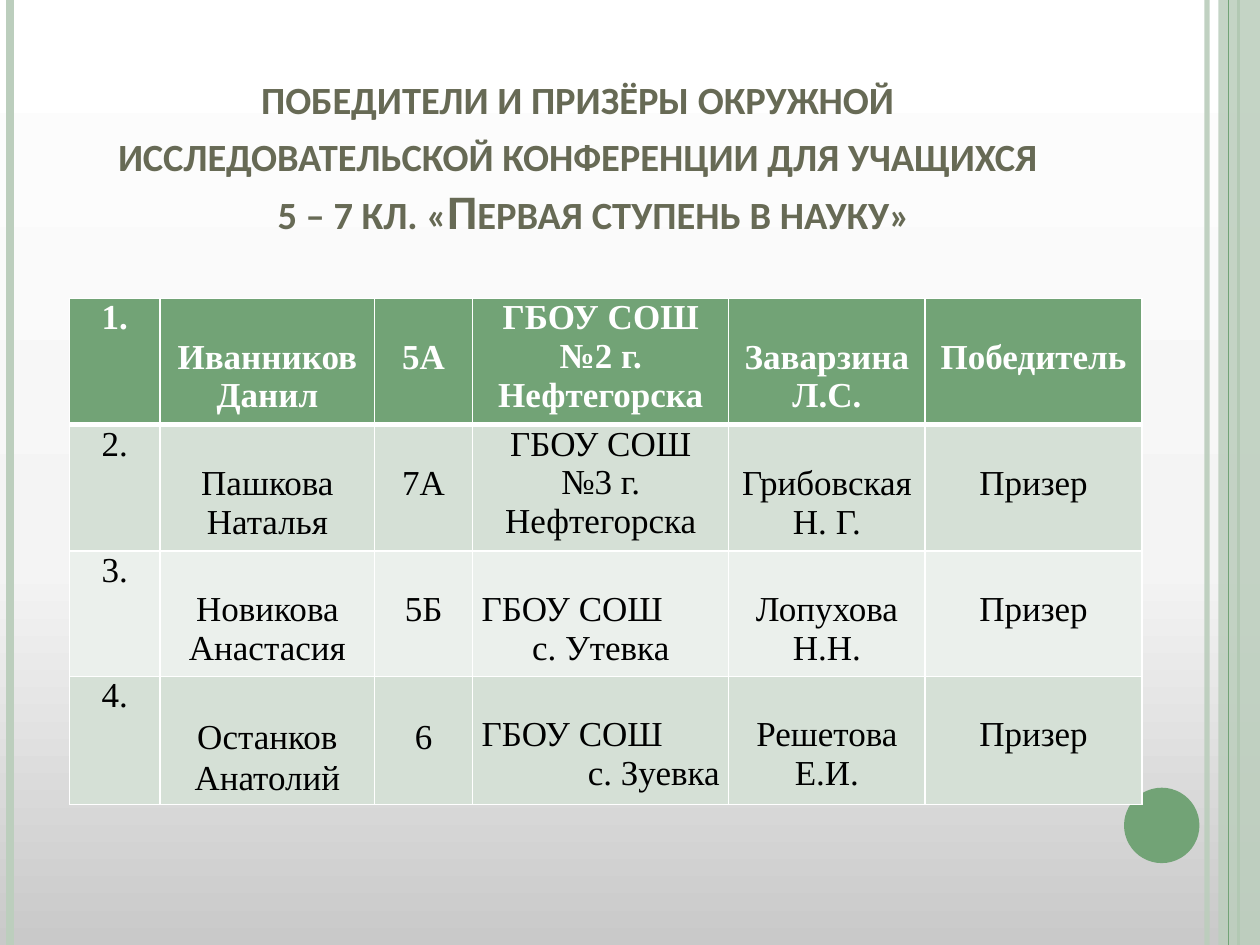
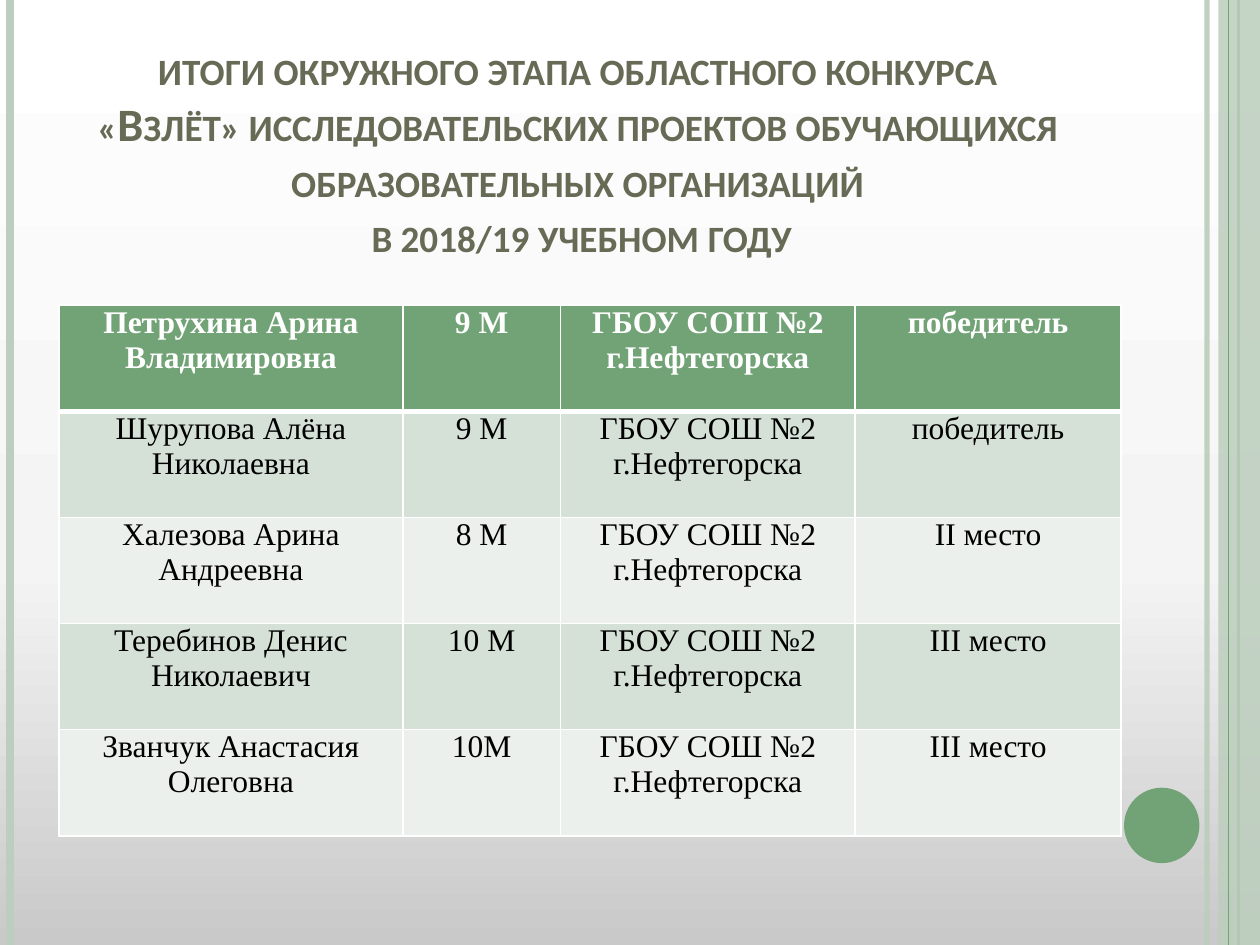
import pptx
import pptx.dml.color
import pptx.enum.shapes
import pptx.enum.text
import pptx.oxml
import pptx.oxml.ns
import pptx.util
from lxml import etree

Cm = pptx.util.Cm
Pt = pptx.util.Pt
qn = pptx.oxml.ns.qn
ALIGN = pptx.enum.text.PP_ALIGN
SHAPE = pptx.enum.shapes.MSO_SHAPE

WIDTH, HEIGHT = 25.4, 19.05
GREEN, PALE_GREEN, WHITE, BLACK = "72A376", "BCCEBD", "FFFFFF", "000000"
TITLE_COLOR = "676A55"
ROW_BANDS = ["D5E0D6", "EBF0EC"]
BACKGROUND_STOPS = [(0, "C9C9C9"), (40, "F4F4F4"), (100, WHITE)]
TITLE_FONT, TABLE_FONT = "Calibri", "Times New Roman"
BLANK_LINE = 0.79

CONFERENCE_TITLE = [
    ("победители и призёры окружной", 0),
    ("исследовательской конференции для учащихся", 0),
    ("5 – 7 кл. «Первая ступень в науку»", 0.65),
]
CONFERENCE_ROWS = [
    ["1.", "Иванников Данил", "5А", "ГБОУ СОШ №2 г. Нефтегорска", "Заварзина Л.С.", "Победитель"],
    ["2.", "Пашкова\nНаталья", "7А", "ГБОУ СОШ №3 г. Нефтегорска", "Грибовская Н. Г.", "Призер"],
    ["3.", "Новикова Анастасия", "5Б", "ГБОУ СОШ\nс. Утевка", "Лопухова Н.Н.", "Призер"],
    ["4.", "Останков Анатолий", "6", "ГБОУ СОШ\nс. Зуевка", "Решетова Е.И.", "Призер"],
]
CONTEST_TITLE = [
    ("итоги окружного этапа областного конкурса", 0),
    ("«Взлёт» исследовательских проектов обучающихся", 0),
    ("образовательных организаций", 0),
    ("в 2018/19 учебном году", 0.16),
]
CITY_SCHOOL = "ГБОУ СОШ №2 г.Нефтегорска"
CONTEST_ROWS = [
    ["Петрухина Арина Владимировна", "9 М", CITY_SCHOOL, "победитель"],
    ["Шурупова Алёна Николаевна", "9 М", CITY_SCHOOL, "победитель"],
    ["Халезова Арина Андреевна", "8 М", CITY_SCHOOL, "II место"],
    ["Теребинов Денис Николаевич", "10 М", CITY_SCHOOL, "III место"],
    ["Званчук Анастасия Олеговна", "10М", CITY_SCHOOL, "III место"],
]


def rgb(color):
    return pptx.dml.color.RGBColor.from_string(color)


def set_alpha(fill_owner, percent):
    color = fill_owner.find(".//" + qn("a:srgbClr"))
    etree.SubElement(color, qn("a:alpha"), val=str(percent * 1000))


def set_background(layout):
    fill = layout.background.fill
    fill.gradient()
    fill.gradient_angle = 90
    stop_list = layout.element.find(".//" + qn("a:gsLst"))
    for stop in list(stop_list):
        stop_list.remove(stop)
    for position, color in BACKGROUND_STOPS:
        stop = etree.SubElement(stop_list, qn("a:gs"), pos=str(position * 1000))
        etree.SubElement(stop, qn("a:srgbClr"), val=color)


def add_vertical_line(slide, left, color, weight, alpha=100):
    line = slide.shapes.add_connector(
        pptx.enum.shapes.MSO_CONNECTOR.STRAIGHT, Cm(left), Cm(0), Cm(left), Cm(HEIGHT))
    line.line.color.rgb = rgb(color)
    line.line.width = Pt(weight)
    properties = line._element.spPr
    if alpha < 100:
        set_alpha(properties, alpha)
    etree.SubElement(properties, qn("a:effectLst"))


def add_plain_shape(slide, kind, left, top, width, height, color, alpha=100):
    shape = slide.shapes.add_shape(kind, Cm(left), Cm(top), Cm(width), Cm(height))
    shape.shadow.inherit = False
    shape.fill.solid()
    shape.fill.fore_color.rgb = rgb(color)
    shape.line.fill.background()
    if alpha < 100:
        set_alpha(shape._element.spPr, alpha)


def add_decoration(slide):
    add_vertical_line(slide, 24.33, PALE_GREEN, 3, 93)
    add_vertical_line(slide, 0.2, PALE_GREEN, 4.5)
    add_vertical_line(slide, 24.97, GREEN, 1.5)
    add_plain_shape(slide, SHAPE.RECTANGLE, 24.56, 0, 0.84, HEIGHT, PALE_GREEN, 87)
    add_vertical_line(slide, 24.77, GREEN, 0.75)
    add_plain_shape(slide, SHAPE.OVAL, 22.66, 15.88, 1.52, 1.52, GREEN)


def format_run(run, font_name, size, color, bold):
    run.font.name = font_name
    run.font.size = Pt(size)
    run.font.color.rgb = rgb(color)
    run.font.bold = bold


def add_title(slide, lines, top, height, size):
    box = slide.shapes.add_textbox(Cm(1.27), Cm(top), Cm(20.75), Cm(height))
    text_frame = box.text_frame
    text_frame.word_wrap = True
    text_frame.vertical_anchor = pptx.enum.text.MSO_ANCHOR.BOTTOM
    text_frame.text = "\n".join(text for text, indent in lines)
    for paragraph, (text, indent) in zip(text_frame.paragraphs, lines):
        paragraph.alignment = ALIGN.CENTER
        paragraph._p.get_or_add_pPr().set("marL", str(Cm(indent)))
        for run in paragraph.runs:
            format_run(run, TITLE_FONT, size, TITLE_COLOR, True)
            run._r.get_or_add_rPr().set("cap", "small")


def set_borders(cell, weights):
    properties = cell._tc.get_or_add_tcPr()
    for side, weight in weights.items():
        border = etree.SubElement(properties, qn("a:ln" + side), w=str(Pt(weight)))
        fill = etree.SubElement(border, qn("a:solidFill"))
        etree.SubElement(fill, qn("a:srgbClr"), val=WHITE)


def format_cell(cell, text, row_index, size):
    is_header = row_index == 0
    set_borders(cell, {"L": 1, "R": 1, "T": 3 if row_index == 1 else 1, "B": 3 if is_header else 1})
    cell.fill.solid()
    cell.fill.fore_color.rgb = rgb(GREEN if is_header else ROW_BANDS[(row_index - 1) % 2])
    cell.margin_left = cell.margin_right = Cm(0.18)
    cell.margin_top = cell.margin_bottom = 0
    cell.text_frame.text = text
    for paragraph in cell.text_frame.paragraphs:
        paragraph.alignment = ALIGN.CENTER
        for run in paragraph.runs:
            format_run(run, TABLE_FONT, size, WHITE if is_header else BLACK, is_header)


def add_results_table(slide, rows, left, top, column_widths, row_height, size):
    frame = slide.shapes.add_table(
        len(rows), len(column_widths), Cm(left), Cm(top),
        Cm(sum(column_widths)), Cm(row_height * len(rows)))
    table = frame.table
    table.horz_banding = False
    for column, width in zip(table.columns, column_widths):
        column.width = Cm(width)
    for row_index, texts in enumerate(rows):
        table.rows[row_index].height = Cm(row_height)
        for column_index, text in enumerate(texts):
            format_cell(table.cell(row_index, column_index), text, row_index, size)
    return table


def adjust_conference_cells(table):
    school_column = 3
    for row_index in range(len(table.rows)):
        for column_index in range(1, len(table.columns)):
            if column_index != school_column or row_index > 1:
                table.cell(row_index, column_index).margin_top = Cm(BLANK_LINE)
    for row_index, village_alignment in ((2, ALIGN.CENTER), (3, ALIGN.RIGHT)):
        school, village = table.cell(row_index, school_column).text_frame.paragraphs
        school.alignment = ALIGN.LEFT
        village.alignment = village_alignment
    for column_index in (1, 2):
        table.cell(3, column_index).text_frame.paragraphs[0].line_spacing = 1.06


def add_results_slide(presentation, layout):
    slide = presentation.slides.add_slide(layout)
    add_decoration(slide)
    return slide


def main():
    presentation = pptx.Presentation()
    presentation.slide_width = Cm(WIDTH)
    presentation.slide_height = Cm(HEIGHT)
    layout = presentation.slide_layouts[6]
    set_background(layout)

    conference = add_results_slide(presentation, layout)
    add_title(conference, CONFERENCE_TITLE, 0.58, 4.37, 27.5)
    table = add_results_table(
        conference, CONFERENCE_ROWS, 1.4, 6.02, [1.83, 4.32, 1.98, 5.16, 3.96, 4.37], 2.53, 20)
    adjust_conference_cells(table)

    contest = add_results_slide(presentation, layout)
    add_title(contest, CONTEST_TITLE, 0.76, 4.65, 26.5)
    add_results_table(
        contest, CONTEST_ROWS, 1.19, 6.15, [6.93, 3.18, 5.94, 5.36], 2.14, 18)

    presentation.save("out.pptx")


if __name__ == "__main__":
    main()
